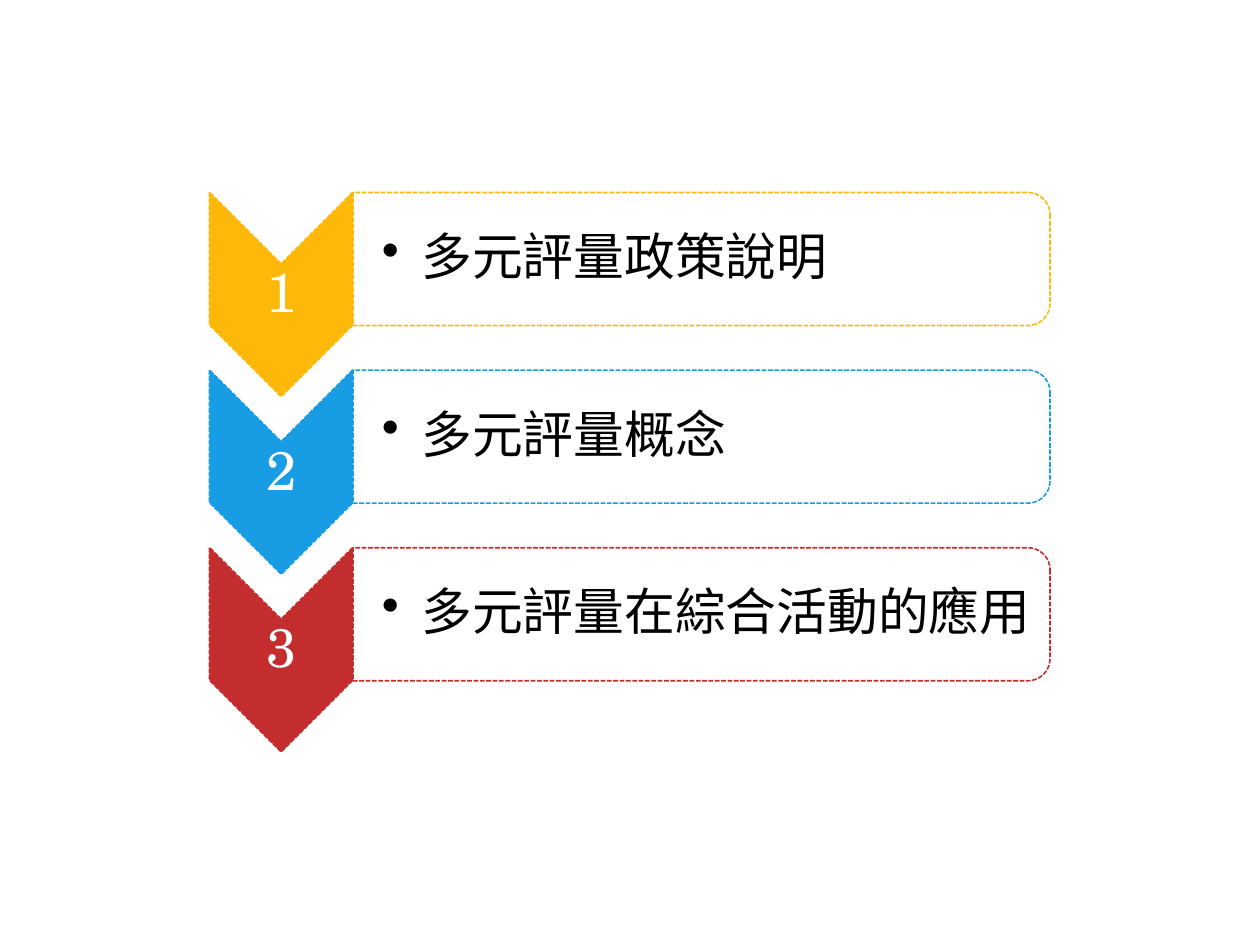
from lxml.etree import SubElement
from pptx import Presentation
from pptx.dml.color import RGBColor
from pptx.enum.dml import MSO_LINE
from pptx.enum.shapes import MSO_SHAPE as SHAPE
from pptx.enum.text import MSO_ANCHOR as ANCHOR, PP_ALIGN as ALIGN
from pptx.oxml.ns import qn
from pptx.util import Pt

WHITE = RGBColor(0xFF, 0xFF, 0xFF)
BLACK = RGBColor(0, 0, 0)
AMBER = RGBColor(0xFE, 0xB8, 0x0A)
BLUE = RGBColor(0x18, 0x9C, 0xE4)
RED = RGBColor(0xC3, 0x2D, 0x2E)

TOPICS = [
    ("多元評量政策說明", AMBER),
    ("多元評量概念", BLUE),
    ("多元評量在綜合活動的應用", RED),
]
ROW_PITCH = 101.5


def add_turned_shape(slide, kind, x, y, w, h, fill, line):
    """Preset shape turned a quarter clockwise, with a dashed outline."""
    sp = slide.shapes.add_shape(kind, Pt(x), Pt(y), Pt(w), Pt(h))
    sp.rotation = 90
    sp.shadow.inherit = False
    sp.fill.solid()
    sp.fill.fore_color.rgb = fill
    sp.line.color.rgb = line
    sp.line.width = Pt(0.9)
    sp.line.dash_style = MSO_LINE.SQUARE_DOT
    return sp


def set_fill_alpha(sp, percent):
    color = sp.fill._xPr.find(qn("a:solidFill"))[0]
    SubElement(color, qn("a:alpha"), val=str(percent * 1000))


def add_bullet(p, indent):
    pPr = p._p.get_or_add_pPr()
    pPr.set("marL", str(Pt(indent)))
    pPr.set("indent", str(-Pt(indent)))
    SubElement(pPr, qn("a:buChar"), char="•")


def add_label(slide, text, x, y, w, h, size, font, color, left_inset=1.4):
    """Text box with one line, centred vertically; returns its paragraph."""
    tf = slide.shapes.add_textbox(Pt(x), Pt(y), Pt(w), Pt(h)).text_frame
    tf.word_wrap = True
    tf.vertical_anchor = ANCHOR.MIDDLE
    tf.margin_left = Pt(left_inset)
    tf.margin_right = tf.margin_top = tf.margin_bottom = Pt(1.4)
    p = tf.paragraphs[0]
    p.text = text
    p.line_spacing = 0.9
    r = p.runs[0]
    r.font.size = Pt(size)
    r.font.name = font
    r.font.color.rgb = color
    return p


def add_topic(slide, number, text, color):
    dy = (number - 1) * ROW_PITCH

    # Numbered chevron
    add_turned_shape(slide, SHAPE.CHEVRON, 102.2, 127.2 + dy, 116.9, 82.1,
                     color, color)
    p = add_label(slide, str(number), 120, 151 + dy, 82, 35.3,
                  31, "TeX Gyre Schola", WHITE)
    p.alignment = ALIGN.CENTER

    # Topic panel
    panel = add_turned_shape(slide, SHAPE.ROUND_2_SAME_RECTANGLE,
                             362.9, -51.1 + dy, 76, 398.2, WHITE, color)
    set_fill_alpha(panel, 90)
    p = add_label(slide, text, 201.7, 113.8 + dy, 394.6, 68.6,
                  29, "Arial", BLACK, left_inset=16.5)
    add_bullet(p, 22.5)


def main():
    prs = Presentation()
    prs.slide_width, prs.slide_height = Pt(720), Pt(540)
    slide = prs.slides.add_slide(prs.slide_layouts[6])
    for number, (text, color) in enumerate(TOPICS, 1):
        add_topic(slide, number, text, color)
    prs.save("out.pptx")


if __name__ == "__main__":
    main()
